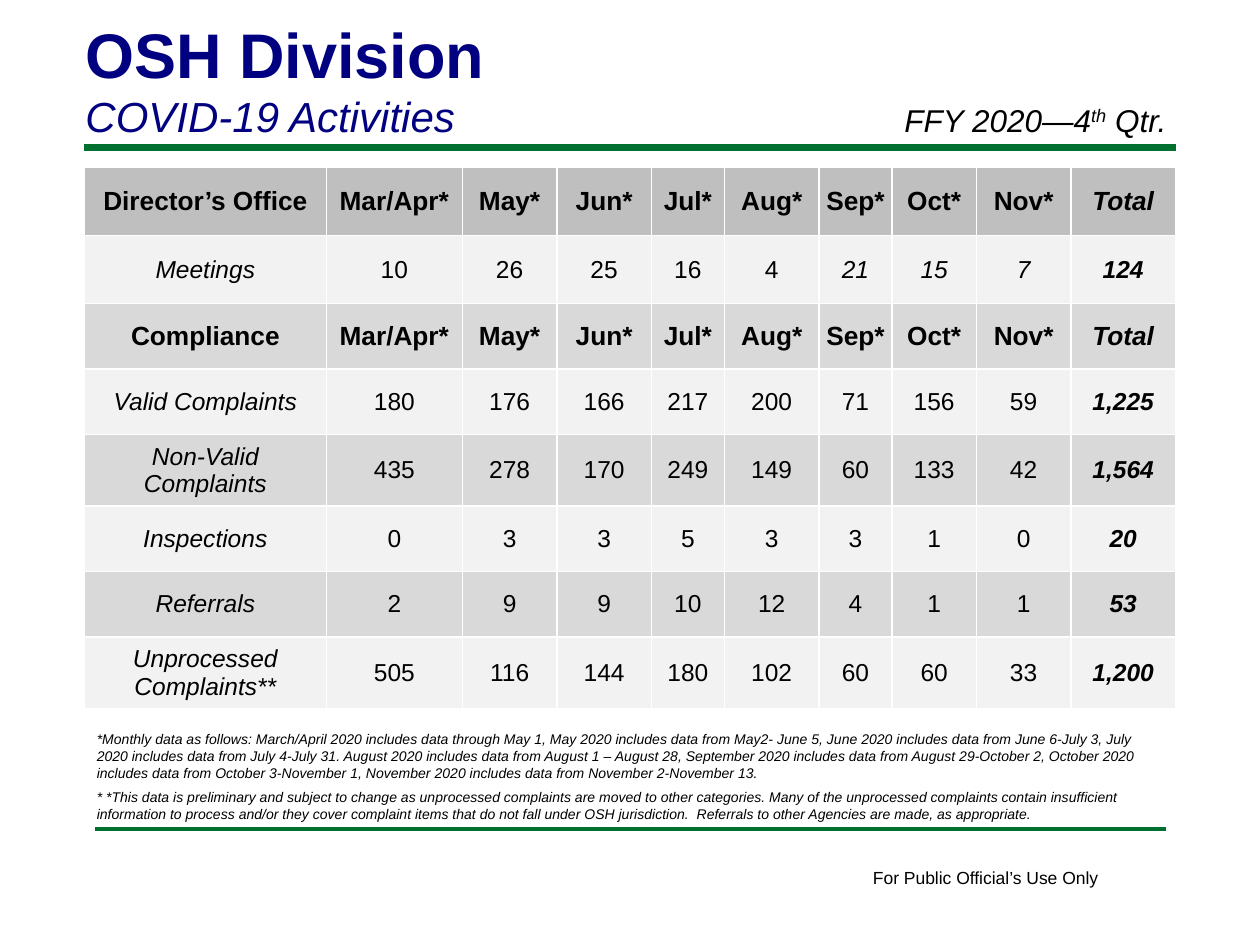
"""Build the OSH Division COVID-19 activities slide."""
from lxml.etree import SubElement
from pptx import Presentation
from pptx.dml.color import RGBColor
from pptx.enum.shapes import MSO_CONNECTOR
from pptx.enum.text import MSO_ANCHOR, PP_ALIGN
from pptx.oxml.ns import qn
from pptx.util import Inches, Pt

COLORS = {
    "black": "000000",
    "navy": "000080",
    "green": "007030",
    "white": "FFFFFF",
    "header": "BFBFBF",
    "dark": "D9D9D9",
    "light": "F2F2F2",
}


def add_span(para, text, size=14, color="black", bold=False, italic=False):
    span = para.add_run()
    span.text = text
    span.font.name = "Arial"
    span.font.size = Pt(size)
    span.font.bold = bold
    span.font.italic = italic
    span.font.color.rgb = RGBColor.from_string(COLORS[color])
    return span


def add_box(left, top, width, height, wrap=True):
    box = page.shapes.add_textbox(Inches(left), Inches(top), Inches(width), Inches(height))
    box.text_frame.word_wrap = wrap
    return box.text_frame


deck = Presentation()
deck.slide_width = Inches(10)
deck.slide_height = Inches(7.5)
page = deck.slides.add_slide(deck.slide_layouts[6])

for left, right, top, weight in [(0.67, 9.33, 1.17, 4), (0.75, 9.25, 6.58, 2)]:
    rule = page.shapes.add_connector(
        MSO_CONNECTOR.STRAIGHT, Inches(left), Inches(top), Inches(right), Inches(top)
    )
    rule.line.color.rgb = RGBColor.from_string(COLORS["green"])
    rule.line.width = Pt(weight)
    SubElement(rule._element.spPr, qn("a:effectLst"))

footer = add_box(6.83, 6.83, 2.01, 0.27, wrap=False)
add_span(footer.paragraphs[0], "For Public Official’s Use Only", size=10)

title = add_box(0.58, 0.06, 8.25, 1.11)
title.vertical_anchor = MSO_ANCHOR.BOTTOM
add_span(title.paragraphs[0], "OSH Division", size=36, color="navy", bold=True)
add_span(title.add_paragraph(), "COVID-19 Activities", size=24, color="navy", italic=True)

period = add_box(7.08, 0.75, 2.5, 0.4).paragraphs[0]
add_span(period, "FFY 2020—4", size=18, italic=True)
ordinal = add_span(period, "th", size=18, italic=True)
ordinal.font._element.set("baseline", "30000")
add_span(period, " Qtr.", size=18, italic=True)

months = ["Mar/Apr*", "May*", "Jun*", "Jul*", "Aug*", "Sep*", "Oct*", "Nov*", "Total"]
rows = [
    ["Director’s Office", *months],
    ["Meetings", "10", "26", "25", "16", "4", "21", "15", "7", "124"],
    ["Compliance", *months],
    ["Valid Complaints", "180", "176", "166", "217", "200", "71", "156", "59", "1,225"],
    ["Non-Valid Complaints", "435", "278", "170", "249", "149", "60", "133", "42", "1,564"],
    ["Inspections", "0", "3", "3", "5", "3", "3", "1", "0", "20"],
    ["Referrals", "2", "9", "9", "10", "12", "4", "1", "1", "53"],
    ["Unprocessed Complaints**", "505", "116", "144", "180", "102", "60", "60", "33", "1,200"],
]
column_widths = [1.92, 1.08, 0.75, 0.75, 0.58, 0.75, 0.58, 0.67, 0.75, 0.83]
header_rows = (0, 2)
total_column = len(column_widths) - 1

table = page.shapes.add_table(
    len(rows), len(column_widths), Inches(0.67), Inches(1.33), Inches(8.66), Inches(4.2)
).table
table.first_row = False
table.horz_banding = False
for column, width in zip(table.columns, column_widths):
    column.width = Inches(width)

for row_index, values in enumerate(rows):
    table.rows[row_index].height = Inches(0.54 if row_index < 2 else 0.52)
    is_header = row_index in header_rows
    shade = "header" if row_index == 0 else "light" if row_index % 2 else "dark"
    for column_index, value in enumerate(values):
        cell = table.cell(row_index, column_index)
        cell.vertical_anchor = MSO_ANCHOR.MIDDLE
        side_margin = 0.01 if column_index >= 6 else 0.08
        cell.margin_left = cell.margin_right = Inches(side_margin)
        for side in ("lnL", "lnR", "lnT", "lnB"):
            border = SubElement(cell._tc.get_or_add_tcPr(), qn(f"a:{side}"), w=str(Pt(1)))
            border_fill = SubElement(border, qn("a:solidFill"))
            SubElement(border_fill, qn("a:srgbClr"), val=COLORS["white"])
        cell.fill.solid()
        cell.fill.fore_color.rgb = RGBColor.from_string(COLORS[shade])
        para = cell.text_frame.paragraphs[0]
        para.alignment = PP_ALIGN.CENTER
        is_total = column_index == total_column
        is_label = column_index == 0 and not is_header
        is_late_meeting = row_index == 1 and column_index >= 6
        add_span(
            para,
            value,
            size=15 if is_header else 14,
            bold=is_header or is_total,
            italic=is_total or is_label or is_late_meeting,
        )

footnotes = [
    (5.75, 0.5, "*Monthly data as follows: March/April 2020 includes data through May 1, "
     "May 2020 includes data from May2- June 5, June 2020 includes data from June 6-July 3, "
     "July 2020 includes data from July 4-July 31. August 2020 includes data from "
     "August 1 – August 28, September 2020 includes data from August 29-October 2, "
     "October 2020 includes data from October 3-November 1, "
     "November 2020 includes data from November 2-November 13."),
    (6.21, 0.37, "* *This data is preliminary and subject to change as unprocessed complaints "
     "are moved to other categories. Many of the unprocessed complaints contain insufficient "
     "information to process and/or they cover complaint items that do not fall under OSH "
     "jurisdiction.  Referrals to other Agencies are made, as appropriate."),
]
for top, height, note in footnotes:
    add_span(add_box(0.67, top, 8.6, height).paragraphs[0], note, size=8, italic=True)

deck.save("out.pptx")
